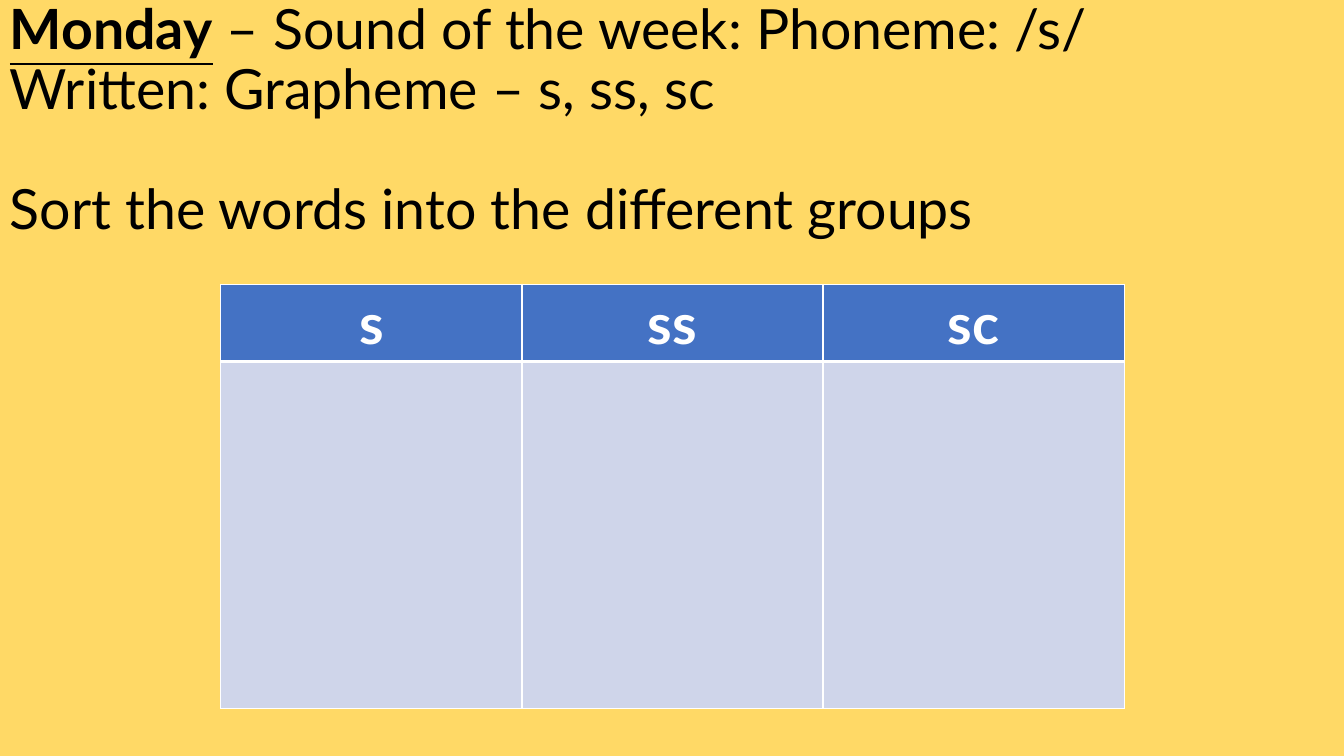
import pptx
import pptx.util
import pptx.dml.color
import pptx.enum.text
import pptx.oxml.ns
import lxml.etree

Inches = pptx.util.Inches
Pt = pptx.util.Pt

COLORS = {
    "background": "FFD966",
    "text": "000000",
    "header": "4472C4",
    "body": "CFD5EA",
    "white": "FFFFFF",
}


def rgb(name):
    return pptx.dml.color.RGBColor.from_string(COLORS[name])


def add_span(para, text, font="Lato", size=39.6, color="text", bold=False, underline=False):
    span = para.add_run()
    span.text = text
    span.font.name = font
    span.font.size = Pt(size)
    span.font.color.rgb = rgb(color)
    span.font.bold = bold
    span.font.underline = underline


def add_border(cell, side, width):
    """Draw one white cell edge; call before the cell is filled."""
    qn = pptx.oxml.ns.qn
    edge = lxml.etree.SubElement(cell._tc.get_or_add_tcPr(), qn(f"a:ln{side}"), w=str(Pt(width)))
    fill = lxml.etree.SubElement(edge, qn("a:solidFill"))
    lxml.etree.SubElement(fill, qn("a:srgbClr"), val=COLORS["white"])


class SlideBuilder:
    def __init__(self, deck):
        self.page = deck.slides.add_slide(deck.slide_layouts[6])
        self.page.background.fill.solid()
        self.page.background.fill.fore_color.rgb = rgb("background")

    def text_box(self, left, top, width, height, paragraphs):
        """Each paragraph is (space before in points, [(text, format), ...])."""
        box = self.page.shapes.add_textbox(Inches(left), Inches(top), Inches(width), Inches(height))
        frame = box.text_frame
        frame.word_wrap = True
        frame.vertical_anchor = pptx.enum.text.MSO_ANCHOR.MIDDLE
        for index, (space, spans) in enumerate(paragraphs):
            para = frame.add_paragraph() if index else frame.paragraphs[0]
            para.line_spacing = 0.9
            para.space_before = Pt(space)
            for text, style in spans:
                add_span(para, text, **style)

    def sorting_table(self, left, top, width, row_heights, headings):
        frame = self.page.shapes.add_table(
            len(row_heights), len(headings),
            Inches(left), Inches(top), Inches(width), Inches(sum(row_heights)))
        table = frame.table
        for row, height in zip(table.rows, row_heights):
            row.height = Inches(height)
        for column, heading in enumerate(headings):
            para = table.cell(0, column).text_frame.paragraphs[0]
            para.alignment = pptx.enum.text.PP_ALIGN.CENTER
            add_span(para, heading, size=40, color="white", bold=True)
            # A thick rule separates the heading from the space below
            for row, (color, top_rule, bottom_rule) in enumerate(
                    [("header", 1, 3), ("body", 3, 1)]):
                cell = table.cell(row, column)
                for side, rule in zip("LRTB", (1, 1, top_rule, bottom_rule)):
                    add_border(cell, side, rule)
                cell.fill.solid()
                cell.fill.fore_color.rgb = rgb(color)


def main():
    deck = pptx.Presentation()
    deck.slide_width = Inches(13.33)
    deck.slide_height = Inches(7.5)
    slide = SlideBuilder(deck)

    # Title and instruction, one line apart
    slide.text_box(0, 0.48, 11.5, 1.45, [
        (0, [("Monday", {"bold": True, "underline": True}),
             (" – Sound of the week: Phoneme: /s/ Written: Grapheme – s, ss, sc", {})]),
        (42.8, [("Sort the words into the different groups", {})]),
    ])

    # Sorting table
    slide.sorting_table(2.19, 2.82, 8.96, [0.76, 3.44], ["s", "ss", "sc"])

    deck.save("out.pptx")


if __name__ == "__main__":
    main()
